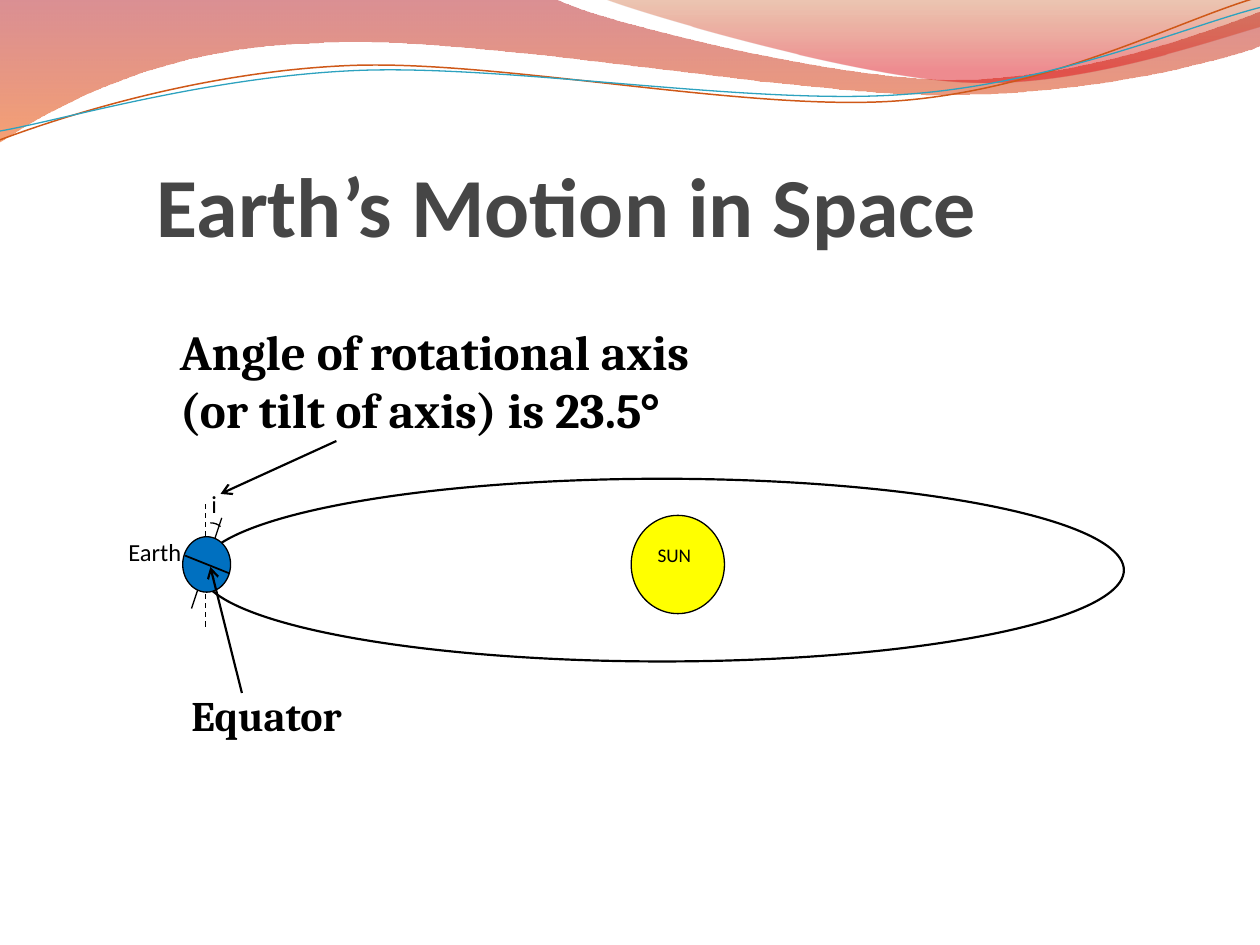
from math import cos, radians, sin
from lxml.etree import Element, SubElement as Sub
from pptx import Presentation
from pptx.dml.color import RGBColor as RGB
from pptx.enum.dml import MSO_LINE as Dash
from pptx.enum.shapes import MSO_CONNECTOR as Conn, MSO_SHAPE as Kind
from pptx.enum.text import MSO_ANCHOR as Anchor, MSO_AUTO_SIZE as Fit, PP_ALIGN as Align
from pptx.oxml.ns import qn
from pptx.util import Inches, Pt

INK = {
    "black": "000000", "white": "FFFFFF", "title": "464646",
    "sun": "FFFF00", "earth": "0070C0",
    "rust": "CF5818", "teal": "2DA2BF",
    "wine": "AF0911", "flame": "EE5300", "brown": "C24400", "red": "DC000B",
}
COLS, ROWS = 10, 7.5
CELL = Inches(1)   # one grid column or row
TILT = -2.7        # turn of the header strands, in degrees

# Header waves: pairs are straight ends, sixes are Bezier control points.
# Stops are position, colour and opacity, all in percent.
BANDS = [
    ([(0, 0), (4.4, -.01), (4.76, .17, 6.64, .63, 7.58, .63),
      (8.53, .63, 9.58, .26, 10, .09), (10.01, .36),
      (9.83, .44, 8.7, .76, 7.46, .75), (6.22, .75, 3.82, .28, 2.57, .34),
      (1.29, .36, .46, .83, -.01, 1.13)],
     [(0, "wine", 45), (100, "flame", 55)]),
    ([(4.79, -.01), (5.09, .11, 6.82, .62, 7.69, .65),
      (8.56, .69, 9.61, .32, 10, .21), (10, 0)],
     [(0, "brown", 30), (80, "red", 45)]),
]
# Strands also have the point they turn about.
STRANDS = [
    ([(0, 1.11), (.48, .93, 1.58, .57, 2.77, .52),
      (3.95, .47, 5.93, .89, 7.13, .8), (8.33, .71, 9.38, .15, 9.98, -.02)],
     (4.99, .58), "rust", .85),
    ([(0, 1.04), (.47, .96, 1.64, .61, 2.83, .56),
      (4.03, .51, 5.97, .84, 7.17, .75), (8.36, .67, 9.41, .21, 10, .06)],
     (5, .59), "teal", .75),
]


def color(name):
    return RGB.from_string(INK[name])


def point(box, x, y):
    return int((box[0] + x) * CELL), int((box[1] + y) * CELL)


def place(box, x, y, w, h):
    """Turn grid offsets within a box into slide lengths."""
    return *point(box, x, y), int(w * CELL), int(h * CELL)


def stroke(line, name, width):
    line.color.rgb = color(name)
    line.width = Pt(width)


def turn(part, pivot, angle):
    """Turn each point of a part about a pivot."""
    a, (px, py) = radians(angle), pivot
    out = []
    for x, y in zip(part[::2], part[1::2]):
        dx, dy = x - px, y - py
        out += [px + dx * cos(a) - dy * sin(a), py + dx * sin(a) + dy * cos(a)]
    return out


def curve(shapes, box, parts, close=False):
    """Draw an outline, then bend its six-number parts into Beziers."""
    first, *rest = [point(box, x, y) for part in parts
                    for x, y in zip(part[::2], part[1::2])]
    pen = shapes.build_freeform(*first, scale=1.0)
    pen.add_line_segments(rest, close=close)
    shape = pen.convert_to_shape()
    shape.shadow.inherit = False
    shape.fill.background()
    steps = iter(list(shape._element.spPr.iter(qn("a:lnTo"))))
    for part in parts[1:]:
        step = next(steps)
        if len(part) == 6:
            bend = Element(qn("a:cubicBezTo"))
            step.addprevious(bend)
            for old in (step, next(steps), next(steps)):
                bend.append(old[0])
                old.getparent().remove(old)
    return shape


def fade(shape, stops):
    """Fill from top to bottom with see-through colours."""
    shape.fill.gradient()
    grad = shape._element.spPr.find(qn("a:gradFill"))
    for kid in list(grad):
        grad.remove(kid)
    group = Sub(grad, qn("a:gsLst"))
    for pos, name, alpha in stops:
        stop = Sub(group, qn("a:gs"), pos=str(pos * 1000))
        tint = Sub(stop, qn("a:srgbClr"), val=INK[name])
        Sub(tint, qn("a:alpha"), val=str(alpha * 1000))
    Sub(grad, qn("a:lin"), ang="5400000", scaled="0")


def disc(shapes, box, pos, fill, width=.75):
    shape = shapes.add_shape(Kind.OVAL, *place(box, *pos))
    shape.shadow.inherit = False
    shape.fill.solid()
    shape.fill.fore_color.rgb = color(fill)
    stroke(shape.line, "black", width)


def rule(shapes, box, start, end, width=.75, dash=False, arrow=False):
    link = shapes.add_connector(
        Conn.STRAIGHT, *point(box, *start), *point(box, *end))
    stroke(link.line, "black", width)
    if dash:
        link.line.dash_style = Dash.DASH
    if arrow:
        Sub(link._element.spPr.find(qn("a:ln")), qn("a:tailEnd"), type="arrow")
    Sub(link._element.spPr, qn("a:effectLst"))


def style(font, size, face="Calibri", ink="black", bold=False):
    font.size, font.name, font.bold = Pt(size), face, bold
    font.color.rgb = color(ink)


def label(shapes, box, pos, text, size, after=10, grow=False, **look):
    frame = shapes.add_textbox(*place(box, *pos)).text_frame
    frame.word_wrap = True
    if grow:
        frame.auto_size = Fit.SHAPE_TO_FIT_TEXT
    para = frame.paragraphs[0]
    para.add_run().text = text
    para.space_after = Pt(after)
    style(para.font, size, **look)
    return para


def header(shapes, box):
    for parts, stops in BANDS:
        band = curve(shapes, box, parts, close=True)
        fade(band, stops)
        band.line.fill.background()
    group = shapes.add_group_shape().shapes
    for parts, pivot, ink, width in STRANDS:
        strand = curve(group, box, [turn(p, pivot, -TILT) for p in parts])
        strand.rotation = TILT
        stroke(strand.line, ink, width)


def heading(slide, box, text):
    title = slide.shapes.title
    title.left, title.top, title.width, title.height = place((0, 0), *box)
    frame = title.text_frame
    frame.text = text
    frame.auto_size = Fit.NONE
    frame.vertical_anchor = Anchor.BOTTOM
    frame.margin_left = frame.margin_right = frame.margin_bottom = 0
    para = frame.paragraphs[0]
    para.alignment = Align.CENTER
    style(para.font, 48, ink="title", bold=True)


def orbit(shapes, box):
    group = shapes.add_group_shape().shapes
    # Orbit and sun
    disc(group, box, (.67, 0, 7.33, 1.45), "white", 1.25)
    disc(group, box, (4.09, .29, .74, .78), "sun")
    label(group, box, (4.2, .46, .88, .64), "SUN", 11)
    # Earth with its tilted axis and upright
    label(group, box, (0, .41, 1.08, .64), "Earth", 14)
    rule(group, box, (.84, .31), (.6, 1.03))
    rule(group, box, (.71, .2), (.71, 1.18), dash=True)
    label(group, box, (.66, .03, .44, .54), "i", 14)
    disc(group, box, (.53, .46, .38, .44), "earth")
    # Equator and angle mark
    rule(shapes, box, (.55, .61), (.9, .75), 1)
    arc = curve(shapes, box, [(.75, .35), (.78, .35, .81, .36, .83, .38)])
    stroke(arc.line, "black", .75)


def notes(shapes, box):
    look = dict(face="Cambria", bold=True, after=0, grow=True)
    para = label(shapes, box, (0, 0, 4.58, 1.04),
                 "Angle of rotational axis (or tilt of axis) is 23.5", 28, **look)
    sign = para.add_run()
    sign.text, sign.font.name = "°", "Calibri"
    rule(shapes, box, (1.34, 1), (.42, 1.42), 1.25, arrow=True)
    label(shapes, box, (.09, 2.92, 2.08, .5), "Equator", 24, **look)
    rule(shapes, box, (.59, 3), (.34, 2), 1.25, arrow=True)


def main():
    deck = Presentation()
    deck.slide_width, deck.slide_height = int(COLS * CELL), int(ROWS * CELL)
    slide = deck.slides.add_slide(deck.slide_layouts[5])
    header(slide.shapes, (0, 0))
    heading(slide, (0, .77, 9, 1.25), "Earth’s Motion in Space")
    orbit(slide.shapes, (.92, 3.8))
    notes(slide.shapes, (1.33, 2.5))
    deck.save("out.pptx")


if __name__ == "__main__":
    main()
